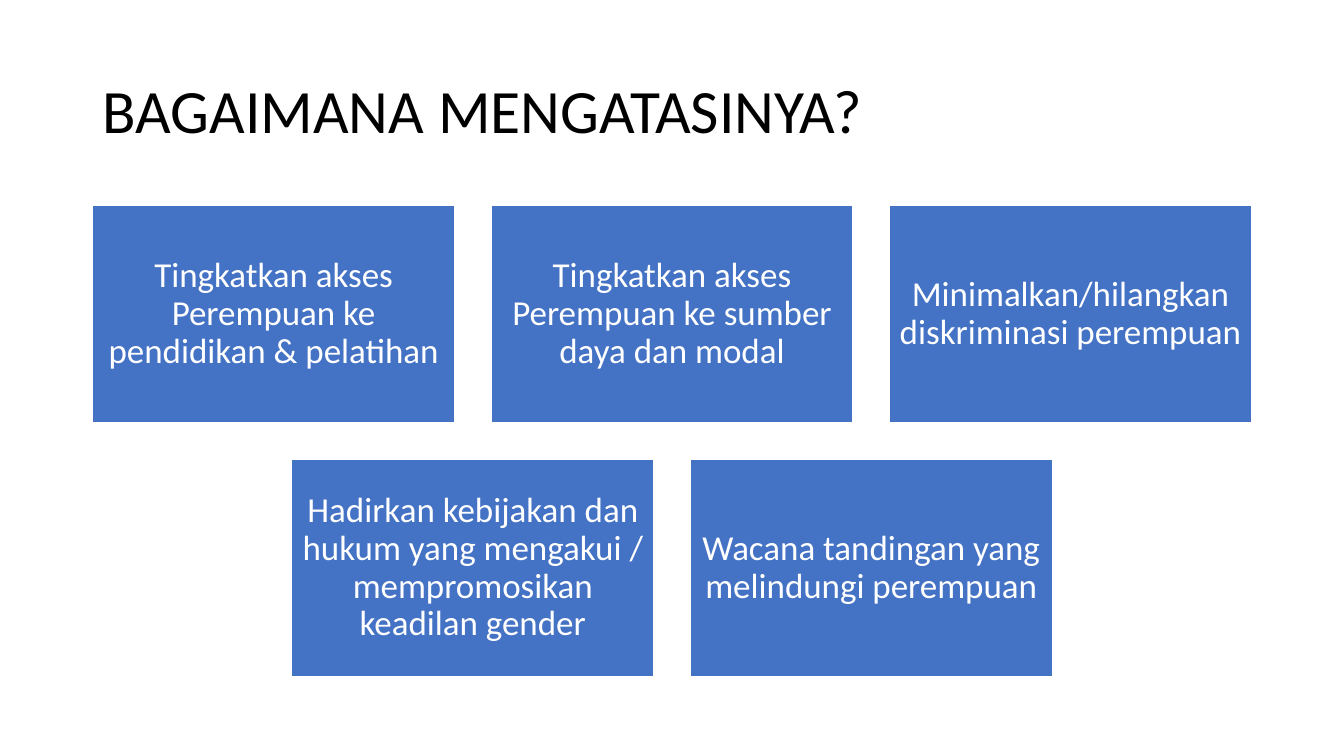
from pptx import Presentation
from pptx import util as u
from pptx.dml import color
from pptx.enum import shapes, text

COLORS = {"title": "000000", "box": "4472C4", "white": "FFFFFF"}
FONT = "Calibri"


def write(frame, wording, size, ink, align):
    frame.word_wrap = True
    frame.vertical_anchor = text.MSO_ANCHOR.MIDDLE
    paragraph = frame.paragraphs[0]
    paragraph.alignment = align
    paragraph.line_spacing = 0.9
    run = paragraph.add_run()
    run.text = wording
    run.font.size = u.Pt(size)
    run.font.name = FONT
    run.font.color.rgb = color.RGBColor.from_string(COLORS[ink])


deck = Presentation()
deck.slide_width, deck.slide_height = u.Cm(33.87), u.Cm(19.05)
slide = deck.slides.add_slide(deck.slide_layouts[5])

heading = slide.shapes.title
heading.left, heading.top = u.Cm(2.33), u.Cm(1.01)
heading.width, heading.height = u.Cm(29.21), u.Cm(3.68)
write(heading.text_frame, "BAGAIMANA MENGATASINYA?", size=44, ink="title",
      align=text.PP_ALIGN.LEFT)

solution_rows = [
    ["Tingkatkan akses Perempuan ke pendidikan & pelatihan",
     "Tingkatkan akses Perempuan ke sumber daya dan modal",
     "Minimalkan/hilangkan diskriminasi perempuan"],
    ["Hadirkan kebijakan dan hukum yang mengakui / mempromosikan keadilan gender",
     "Wacana tandingan yang melindungi perempuan"],
]
box_width, box_height, gap = u.Cm(9.13), u.Cm(5.48), u.Cm(0.91)
first_top = u.Cm(5.18)

for row, solutions in enumerate(solution_rows):
    row_width = len(solutions) * (box_width + gap) - gap
    row_left = (deck.slide_width - row_width) // 2
    top = first_top + row * (box_height + gap)
    for column, solution in enumerate(solutions):
        left = row_left + column * (box_width + gap)
        box = slide.shapes.add_shape(shapes.MSO_SHAPE.RECTANGLE, left, top,
                                     box_width, box_height)
        box.shadow.inherit = False
        box.fill.solid()
        box.fill.fore_color.rgb = color.RGBColor.from_string(COLORS["box"])
        box.line.color.rgb = color.RGBColor.from_string(COLORS["white"])
        box.line.width = u.Pt(1)
        frame = box.text_frame
        frame.margin_left = frame.margin_right = u.Cm(0.25)
        frame.margin_top = frame.margin_bottom = u.Cm(0.25)
        write(frame, solution, size=25, ink="white", align=text.PP_ALIGN.CENTER)

deck.save("out.pptx")
